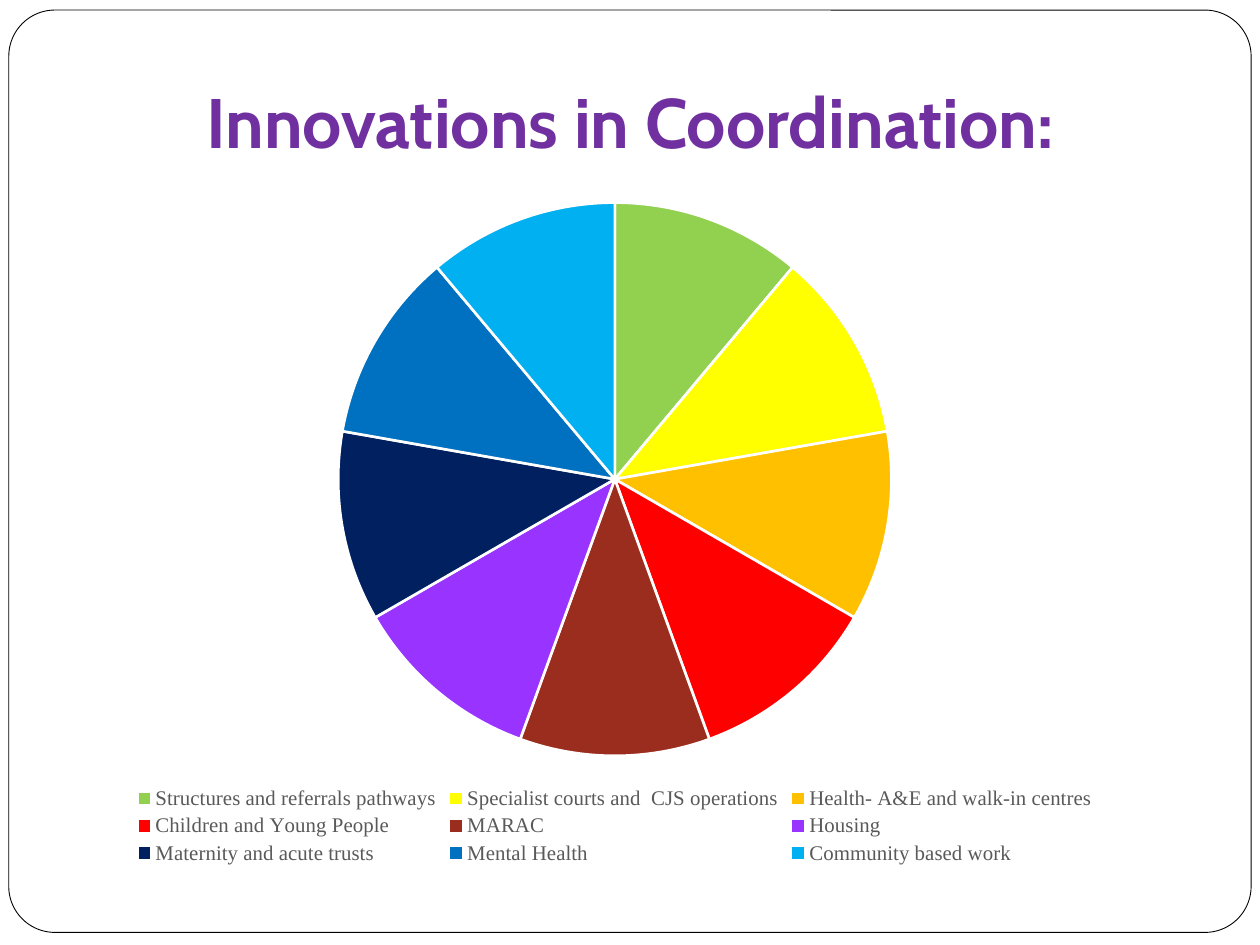
from dataclasses import dataclass

from pptx import Presentation
from pptx.chart.data import CategoryChartData
from pptx.dml.color import RGBColor as RGB
from pptx.enum.chart import XL_CHART_TYPE as ChartType, XL_LEGEND_POSITION as LegendPos
from pptx.enum.shapes import MSO_SHAPE as Shape
from pptx.enum.text import MSO_ANCHOR as Anchor, PP_ALIGN as Align
from pptx.util import Inches, Pt


@dataclass(frozen=True)
class Theme:
    title_font: str = "Cabin"
    body_font: str = "Times New Roman"
    title_size: float = 40
    chart_size: float = 10
    legend_size: float = 11.9
    title: str = "7030A0"
    legend: str = "595959"
    line: str = "000000"
    paper: str = "FFFFFF"


SLICES = {
    "Structures and referrals pathways": "92D050",
    "Specialist courts and  CJS operations": "FFFF00",
    "Health- A&E and walk-in centres": "FFC000",
    "Children and Young People": "FF0000",
    "MARAC": "9B2D1F",
    "Housing": "9933FF",
    "Maternity and acute trusts": "002060",
    "Mental Health": "0070C0",
    "Community based work": "00B0F0",
}
SHARE = 11


def set_font(font, name, size, color, bold=False):
    font.name = name
    font.size = Pt(size)
    font.bold = bold
    font.color.rgb = RGB.from_string(color)


def write(tf, text, align=Align.LEFT, anchor=Anchor.TOP, **font):
    tf.word_wrap = True
    tf.vertical_anchor = anchor
    p = tf.paragraphs[0]
    p.alignment = align
    r = p.add_run()
    r.text = text
    set_font(r.font, **font)


class Deck:
    def __init__(self, prs, theme):
        self.theme = theme
        self.s = prs.slides.add_slide(prs.slide_layouts[5])

    def frame(self, x, y, w, h, radius):
        sp = self.s.shapes.add_shape(
            Shape.ROUNDED_RECTANGLE, Inches(x), Inches(y), Inches(w), Inches(h))
        sp.adjustments[0] = radius
        sp.shadow.inherit = False
        sp.fill.solid()
        sp.fill.fore_color.rgb = RGB.from_string(self.theme.paper)
        sp.line.color.rgb = RGB.from_string(self.theme.line)
        sp.line.width = Pt(0.5)
        self.s.shapes.element.insert(2, sp.element)

    def title(self, text, x, y, w, h):
        t = self.theme
        sp = self.s.shapes.title
        sp.left, sp.top, sp.width, sp.height = map(Inches, (x, y, w, h))
        sp.text_frame.margin_bottom = Inches(0.1)
        write(sp.text_frame, text, align=Align.CENTER, anchor=Anchor.BOTTOM,
              name=t.title_font, size=t.title_size, color=t.title, bold=True)

    def pie(self, slices, share, x, y, w, h):
        t = self.theme
        data = CategoryChartData()
        data.categories = list(slices)
        data.add_series("Series 1", [share] * len(slices))
        chart = self.s.shapes.add_chart(
            ChartType.PIE, Inches(x), Inches(y), Inches(w), Inches(h), data).chart
        chart.has_title = False
        set_font(chart.font, t.body_font, t.chart_size, t.line)
        chart.has_legend = True
        chart.legend.position = LegendPos.BOTTOM
        chart.legend.include_in_layout = False
        set_font(chart.legend.font, t.body_font, t.legend_size, t.legend)
        plot = chart.plots[0]
        plot.vary_by_categories = True
        for i, color in enumerate(slices.values()):
            fmt = plot.series[0].points[i].format
            fmt.fill.solid()
            fmt.fill.fore_color.rgb = RGB.from_string(color)
            fmt.line.color.rgb = RGB.from_string(t.paper)
            fmt.line.width = Pt(1.5)


def main():
    prs = Presentation()
    prs.slide_width, prs.slide_height = Inches(10), Inches(7.5)
    deck = Deck(prs, Theme())
    deck.frame(0.07, 0.08, 9.86, 7.32, radius=0.05)
    deck.title("Innovations in Coordination:", 0, 0.17, 10, 1.22)
    deck.pie(SLICES, SHARE, 0.43, 1.47, 8.9, 5.43)
    prs.save("out.pptx")


if __name__ == "__main__":
    main()
